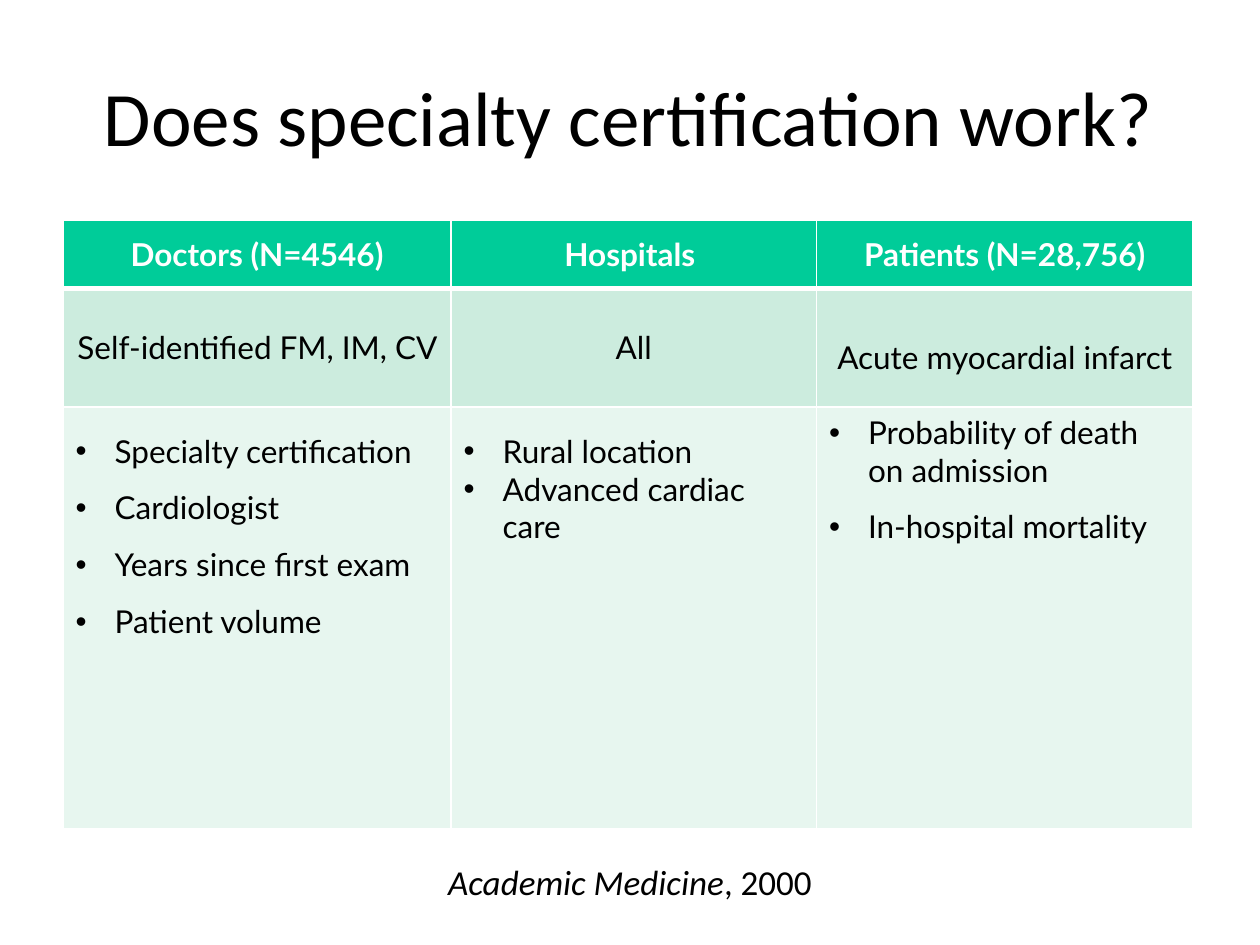
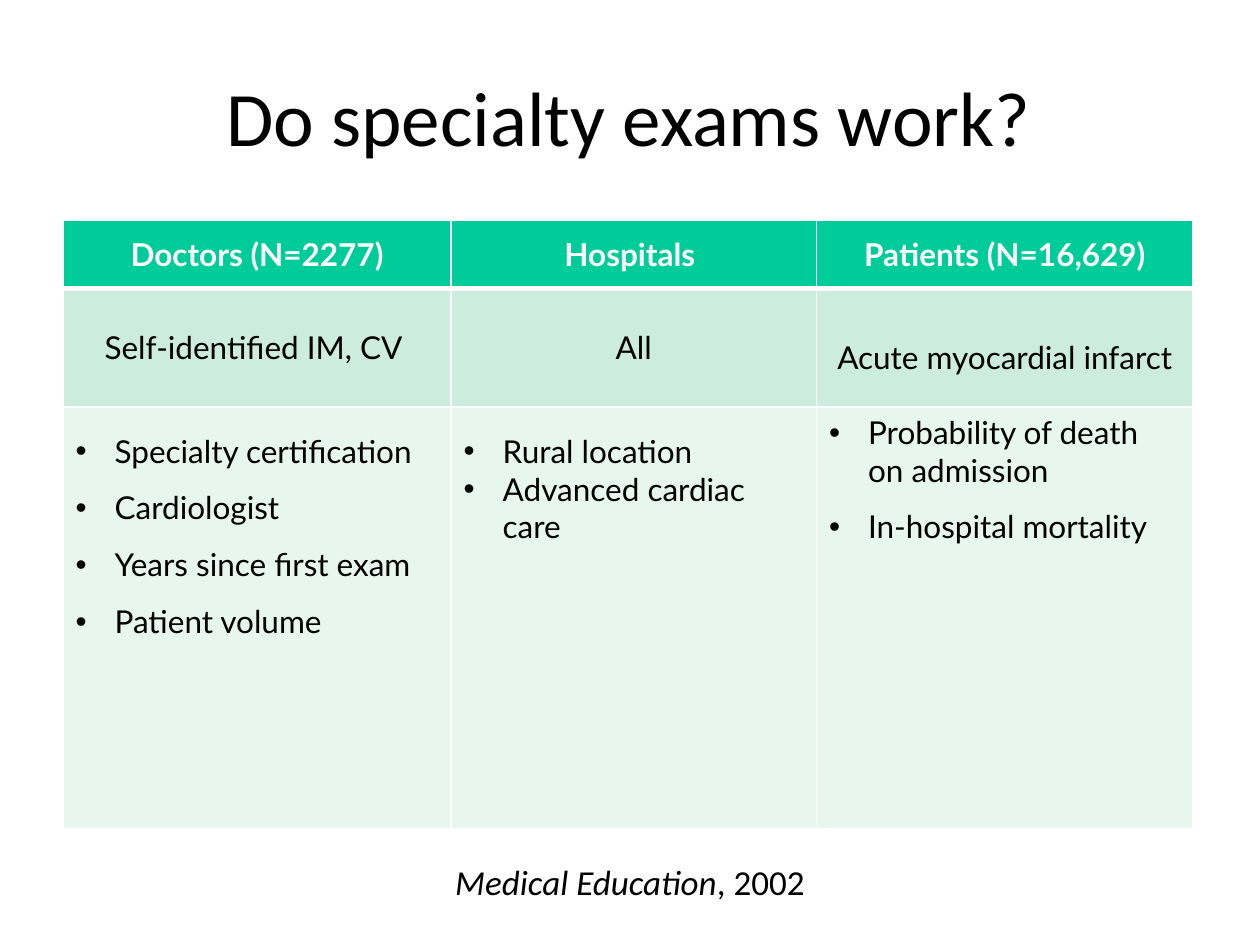
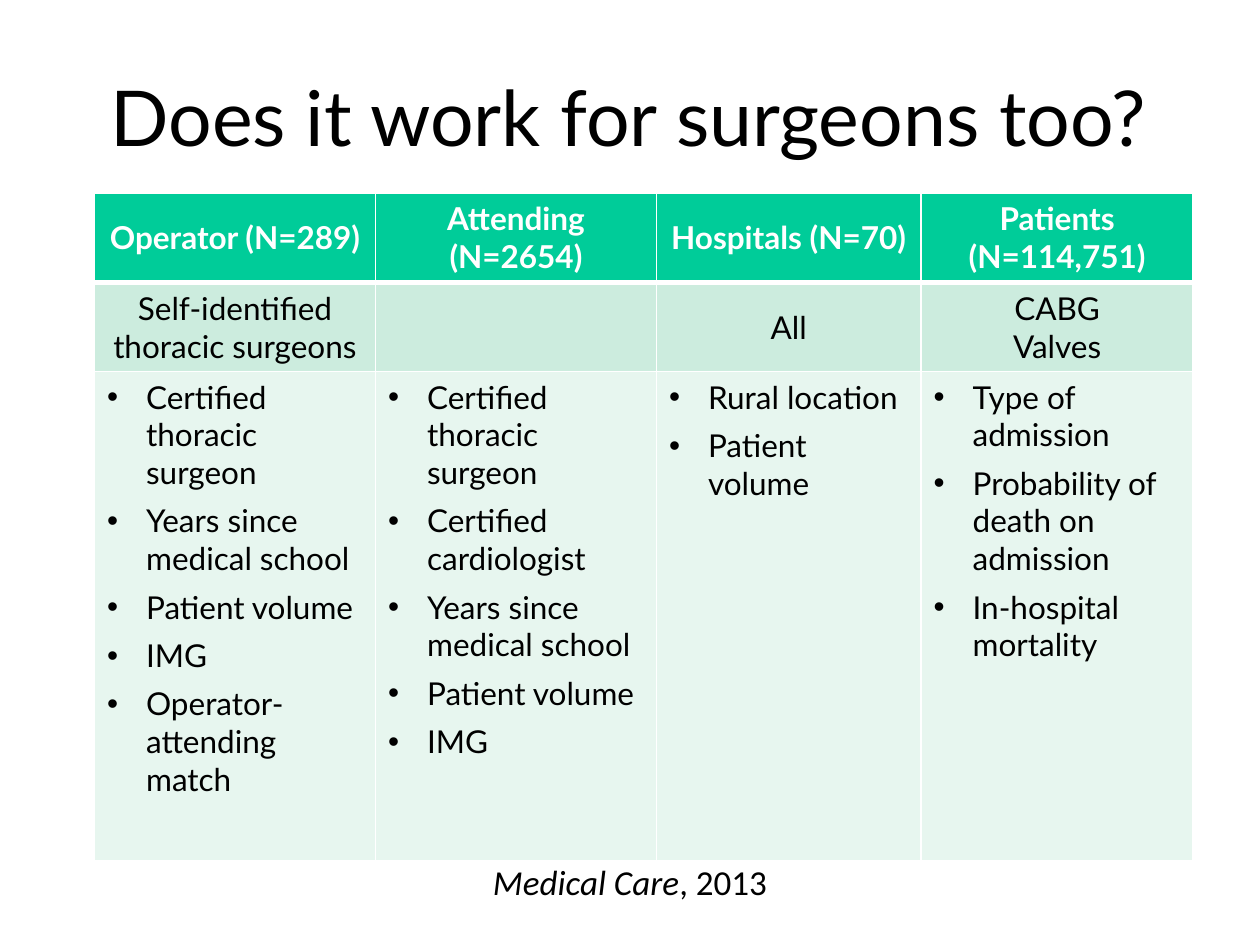
from dataclasses import dataclass

from lxml import etree
from pptx import Presentation
from pptx.dml.color import RGBColor
from pptx.enum.text import MSO_ANCHOR, PP_ALIGN
from pptx.oxml.ns import qn
from pptx.util import Pt

PX = 9144  # EMU per px, 100 px to the inch
SLIDE_SIZE = (1000, 750)
TITLE_BOX = (50, 30, 898, 123)
CITATION_BOX = (0, 658, 1000, 83)
BULLET_INDENT = 31

BLACK = RGBColor(0x00, 0x00, 0x00)
WHITE = RGBColor(0xFF, 0xFF, 0xFF)
GREEN = RGBColor(0x00, 0xCC, 0x99)
LIGHT_GREEN = RGBColor(0xCC, 0xEC, 0xDE)
PALE_GREEN = RGBColor(0xE7, 0xF6, 0xEF)
ROW_FILLS = (GREEN, LIGHT_GREEN, PALE_GREEN)

BODY_FONT = "Calibri"
TABLE_FONT = "Lato"
CENTER = PP_ALIGN.CENTER
LEFT = PP_ALIGN.LEFT
MIDDLE = MSO_ANCHOR.MIDDLE
TOP = MSO_ANCHOR.TOP


@dataclass
class Line:
    text: str
    spacing: float = 1.0
    after: int = 0


@dataclass
class Column:
    width: int
    heading: list
    group: list
    measures: list


def lines(*texts, spacing=1.0, after=0):
    return [Line(text, spacing, after) for text in texts]


def px(*lengths):
    return [length * PX for length in lengths]


def add_run(paragraph, text, size, font_name, color=BLACK, bold=False, italic=False):
    run = paragraph.add_run()
    run.text = text
    font = run.font
    font.size, font.name = Pt(size), font_name
    font.bold, font.italic = bold, italic
    font.color.rgb = color


def add_centered_text(slide, box, size, runs):
    """Add one centred paragraph; runs are (text, font name, italic)."""
    frame = slide.shapes.add_textbox(*px(*box)).text_frame
    frame.word_wrap = True
    frame.vertical_anchor = MIDDLE
    paragraph = frame.paragraphs[0]
    paragraph.alignment = CENTER
    for text, font_name, italic in runs:
        add_run(paragraph, text, size, font_name, italic=italic)


def add_bullet(paragraph):
    properties = paragraph._p.get_or_add_pPr()
    properties.set("marL", str(BULLET_INDENT * PX))
    properties.set("indent", str(-BULLET_INDENT * PX))
    etree.SubElement(properties, qn("a:buFont")).set("typeface", "Arial")
    etree.SubElement(properties, qn("a:buChar")).set("char", "•")


def set_borders(cell, row):
    """Draw thin white borders, with a thick one below the header row."""
    properties = cell._tc.get_or_add_tcPr()
    widths = {"L": 1, "R": 1, "T": 3 if row == 1 else 1, "B": 3 if row == 0 else 1}
    for side, width in widths.items():
        border = etree.SubElement(properties, qn(f"a:ln{side}"), w=str(Pt(width)))
        fill = etree.SubElement(border, qn("a:solidFill"))
        etree.SubElement(fill, qn("a:srgbClr"), val=str(WHITE))


def fill_cell(cell, row, cell_lines):
    is_header, is_list = row == 0, row == 2
    set_borders(cell, row)
    cell.fill.solid()
    cell.fill.fore_color.rgb = ROW_FILLS[row]
    cell.vertical_anchor = TOP if is_list else MIDDLE
    frame = cell.text_frame
    for index, line in enumerate(cell_lines):
        paragraph = frame.add_paragraph() if index else frame.paragraphs[0]
        if is_list:
            add_bullet(paragraph)
        paragraph.alignment = LEFT if is_list else CENTER
        paragraph.line_spacing = line.spacing
        paragraph.space_after = Pt(line.after)
        add_run(paragraph, line.text, 18, TABLE_FONT,
                WHITE if is_header else BLACK, bold=is_header)


def add_study_table(slide, left, top, row_heights, columns):
    width = sum(column.width for column in columns)
    frame = slide.shapes.add_table(len(row_heights), len(columns),
                                   *px(left, top, width, sum(row_heights)))
    table = frame.table
    table.first_row = table.horz_banding = False
    for row, height in enumerate(row_heights):
        table.rows[row].height = height * PX
    for index, column in enumerate(columns):
        table.columns[index].width = column.width * PX
        for row, cell_lines in enumerate((column.heading, column.group, column.measures)):
            fill_cell(table.cell(row, index), row, cell_lines)


def add_study_slide(presentation, title, journal, year, table, title_font=BODY_FONT):
    """Add a titled slide; table is (left, top, row heights, columns)."""
    slide = presentation.slides.add_slide(presentation.slide_layouts[6])
    add_centered_text(slide, TITLE_BOX, 44, [(title, title_font, False)])
    add_study_table(slide, *table)
    add_centered_text(slide, CITATION_BOX, 20,
                      [(journal, BODY_FONT, True), (f", {year}", BODY_FONT, False)])


def infarct_table(doctor_count, specialties, patient_count):
    return 50, 175, (54, 94, 335), [
        Column(308, lines(f"Doctors (N={doctor_count})"),
               lines(f"Self-identified {specialties} "),
               lines("Specialty certification", "Cardiologist",
                     "Years since first exam", "Patient volume", spacing=1.5)),
        Column(290, lines("Hospitals "), lines("All"),
               [Line("Rural location", 1.5), Line("Advanced cardiac care")]),
        Column(299, lines(f"Patients (N={patient_count})"),
               lines("Acute myocardial infarct", spacing=1.5),
               [Line("Probability of death on admission"),
                Line("In-hospital mortality", 1.5)]),
    ]


def surgeon_table():
    certified, *experience = ("Certified thoracic surgeon", "Years since medical school",
                              "Patient volume", "IMG")
    return 75, 153, (71, 71, 388), [
        Column(223, lines("Operator (N=289)"), lines("Self-identified thoracic surgeons"),
               lines(certified, *experience, "Operator-attending match", after=6)),
        Column(223, lines("Attending", "(N=2654)"), [],
               lines(certified, "Certified cardiologist", *experience, after=6)),
        Column(210, lines("Hospitals (N=70)"), lines("All"),
               lines("Rural location", "Patient volume", after=6)),
        Column(216, lines("Patients (N=114,751)"), lines("CABG", "Valves"),
               lines("Type of admission", "Probability of death on admission",
                     "In-hospital mortality", after=6)),
    ]


def main():
    presentation = Presentation()
    presentation.slide_width, presentation.slide_height = px(*SLIDE_SIZE)
    add_study_slide(presentation, "Does specialty certification work?",
                    "Academic Medicine", 2000,
                    infarct_table("4546", "FM, IM, CV", "28,756"))
    add_study_slide(presentation, "Do specialty exams work?",
                    "Medical Education", 2002,
                    infarct_table("2277", "IM, CV", "16,629"))
    add_study_slide(presentation, "Does it work for surgeons too?",
                    "Medical Care", 2013, surgeon_table(), title_font=TABLE_FONT)
    presentation.save("out.pptx")


if __name__ == "__main__":
    main()
